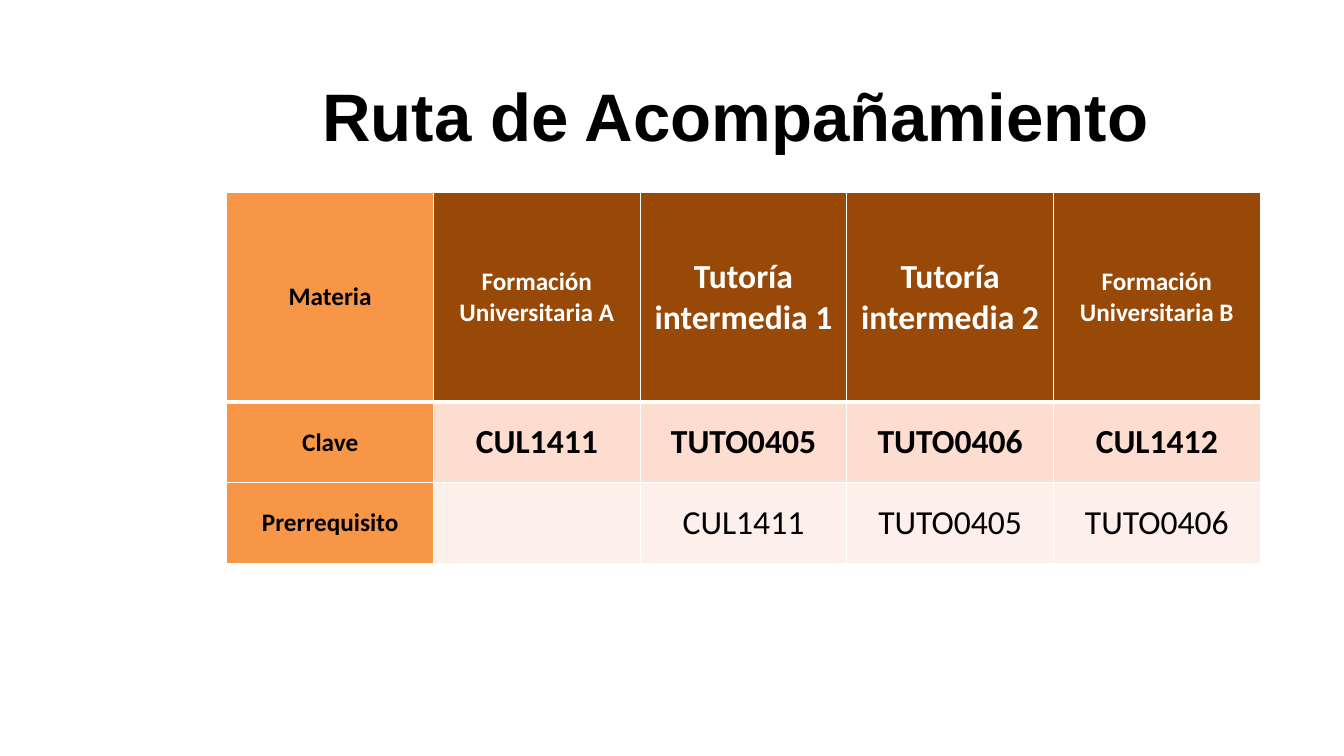
from lxml import etree
from pptx import Presentation
from pptx.dml.color import RGBColor
from pptx.enum.text import MSO_ANCHOR, PP_ALIGN
from pptx.oxml.ns import qn
from pptx.util import Inches, Pt

CENTER = PP_ALIGN.CENTER
MIDDLE = MSO_ANCHOR.MIDDLE
BLACK, WHITE = "000000", "FFFFFF"
ORANGE, BROWN = "F79646", "984807"
BODY_FILLS = [BROWN, "FCDDCF", "FDEFE9"]

COLUMN_WIDTH = 2.05
ROW_HEIGHTS = [2.08, 0.8, 0.8]
ROWS = [
    ["Materia", "Formación Universitaria A", "Tutoría intermedia 1",
     "Tutoría intermedia 2", "Formación Universitaria B"],
    ["Clave", "CUL1411", "TUTO0405", "TUTO0406", "CUL1412"],
    ["Prerrequisito", "", "CUL1411", "TUTO0405", "TUTO0406"],
]


def write_text(text_frame, text, size, font="Calibri", color=BLACK, bold=True):
    paragraph = text_frame.paragraphs[0]
    paragraph.alignment = CENTER
    run = paragraph.add_run()
    run.text = text
    run.font.name = font
    run.font.size = Pt(size)
    run.font.bold = bold
    run.font.color.rgb = RGBColor.from_string(color)


def add_border(cell, side, width):
    line = etree.SubElement(cell._tc.get_or_add_tcPr(), qn(f"a:ln{side}"), w=str(Pt(width)))
    fill = etree.SubElement(line, qn("a:solidFill"))
    etree.SubElement(fill, qn("a:srgbClr"), val=WHITE)


presentation = Presentation()
presentation.slide_width = Inches(13.33)
presentation.slide_height = Inches(7.5)
slide = presentation.slides.add_slide(presentation.slide_layouts[5])

# Title
title = slide.shapes.title
title.left, title.top = Inches(2.17), Inches(0.56)
title.width, title.height = Inches(10.25), Inches(1.16)
title.text_frame.vertical_anchor = MIDDLE
write_text(title.text_frame, "Ruta de Acompañamiento", 48, font="Arial")

# Course table
column_count = len(ROWS[0])
table = slide.shapes.add_table(
    len(ROWS), column_count, Inches(2.25), Inches(1.91),
    Inches(COLUMN_WIDTH * column_count), Inches(sum(ROW_HEIGHTS))).table
for column in table.columns:
    column.width = Inches(COLUMN_WIDTH)

for row_index, texts in enumerate(ROWS):
    table.rows[row_index].height = Inches(ROW_HEIGHTS[row_index])
    for column_index, text in enumerate(texts):
        cell = table.cell(row_index, column_index)
        cell.vertical_anchor = MIDDLE

        # White grid with a heavier rule under the header
        add_border(cell, "L", 1)
        add_border(cell, "R", 1)
        add_border(cell, "T", 3 if row_index == 1 else 1)
        add_border(cell, "B", 3 if row_index == 0 else 1)

        # Row labels are orange, the rest takes the colour of its row
        is_label = column_index == 0
        cell.fill.solid()
        cell.fill.fore_color.rgb = RGBColor.from_string(
            ORANGE if is_label else BODY_FILLS[row_index])
        if text:
            write_text(
                cell.text_frame, text,
                18 if is_label or text.startswith("Formación") else 24,
                color=WHITE if row_index == 0 and not is_label else BLACK,
                bold=is_label or row_index < 2)

presentation.save("out.pptx")
